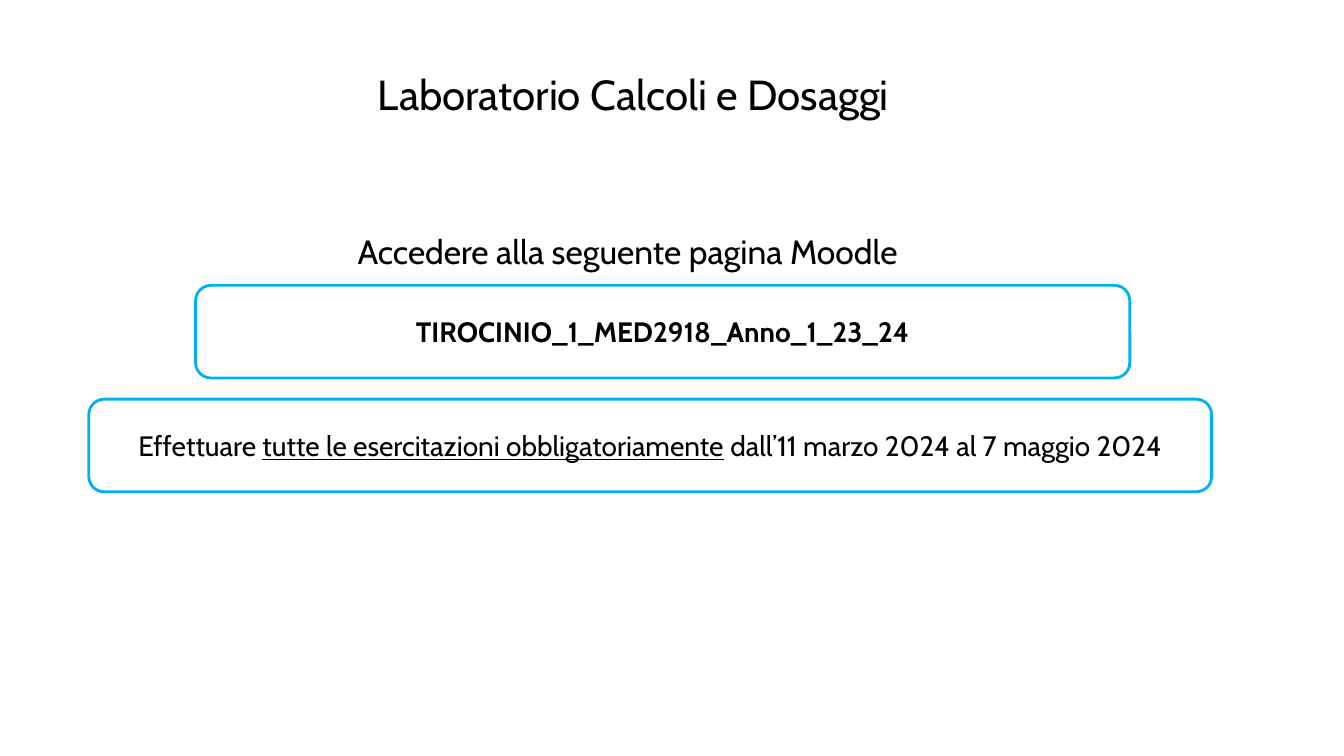
from pptx import Presentation
from pptx.dml.color import RGBColor
from pptx.enum.shapes import MSO_SHAPE as Shape
from pptx.enum.text import MSO_ANCHOR as Anchor, MSO_AUTO_SIZE as AutoSize, PP_ALIGN as Align
from pptx.util import Pt

COLORS = {"text": "000000", "border": "00B0F0"}
FONT = "Cabin"


def format_runs(paragraph, size, align, bold=False):
    paragraph.alignment = align
    for run in paragraph.runs:
        run.font.name = FONT
        run.font.size = Pt(size)
        run.font.bold = bold
        run.font.color.rgb = RGBColor.from_string(COLORS["text"])


def fill_heading(heading, box, text, size):
    heading.left, heading.top, heading.width, heading.height = map(Pt, box)
    frame = heading.text_frame
    frame.text = text
    frame.word_wrap = False
    frame.auto_size = AutoSize.SHAPE_TO_FIT_TEXT
    frame.vertical_anchor = Anchor.TOP
    format_runs(frame.paragraphs[0], size, Align.LEFT)


def add_notice(slide, box, parts, bold=False, underlined=None):
    notice = slide.shapes.add_shape(Shape.ROUNDED_RECTANGLE, *map(Pt, box))
    notice.shadow.inherit = False
    notice.fill.background()
    notice.line.color.rgb = RGBColor.from_string(COLORS["border"])
    notice.line.width = Pt(2)
    frame = notice.text_frame
    frame.word_wrap = True
    frame.vertical_anchor = Anchor.MIDDLE
    message = frame.paragraphs[0]
    for part in parts:
        run = message.add_run()
        run.text = part
        if part == underlined:
            run.font.underline = True
    format_runs(message, 20, Align.CENTER, bold)


def build_lab_slide(presentation):
    slide = presentation.slides.add_slide(presentation.slide_layouts[5])
    fill_heading(slide.shapes.title, (262.8, 45.4, 402.5, 43.9),
                 "Laboratorio Calcoli e Dosaggi", 30)
    add_notice(slide, (139.7, 203.8, 667.4, 66.2),
               ["TIROCINIO_1_MED2918_Anno_1_23_24"], bold=True)
    access_box = (248.4, 161.3, 432, 36)
    access = slide.shapes.add_textbox(*map(Pt, access_box))
    fill_heading(access, access_box, "Accedere alla seguente pagina Moodle", 24)
    obligation = "tutte le esercitazioni obbligatoriamente"
    add_notice(slide, (63.4, 285.1, 802.1, 66.2),
               ["Effettuare ", obligation, " dall’11 marzo 2024 al 7 maggio 2024"],
               underlined=obligation)


def main():
    presentation = Presentation()
    presentation.slide_width = Pt(960)
    presentation.slide_height = Pt(540)
    build_lab_slide(presentation)
    presentation.save("out.pptx")


if __name__ == "__main__":
    main()
